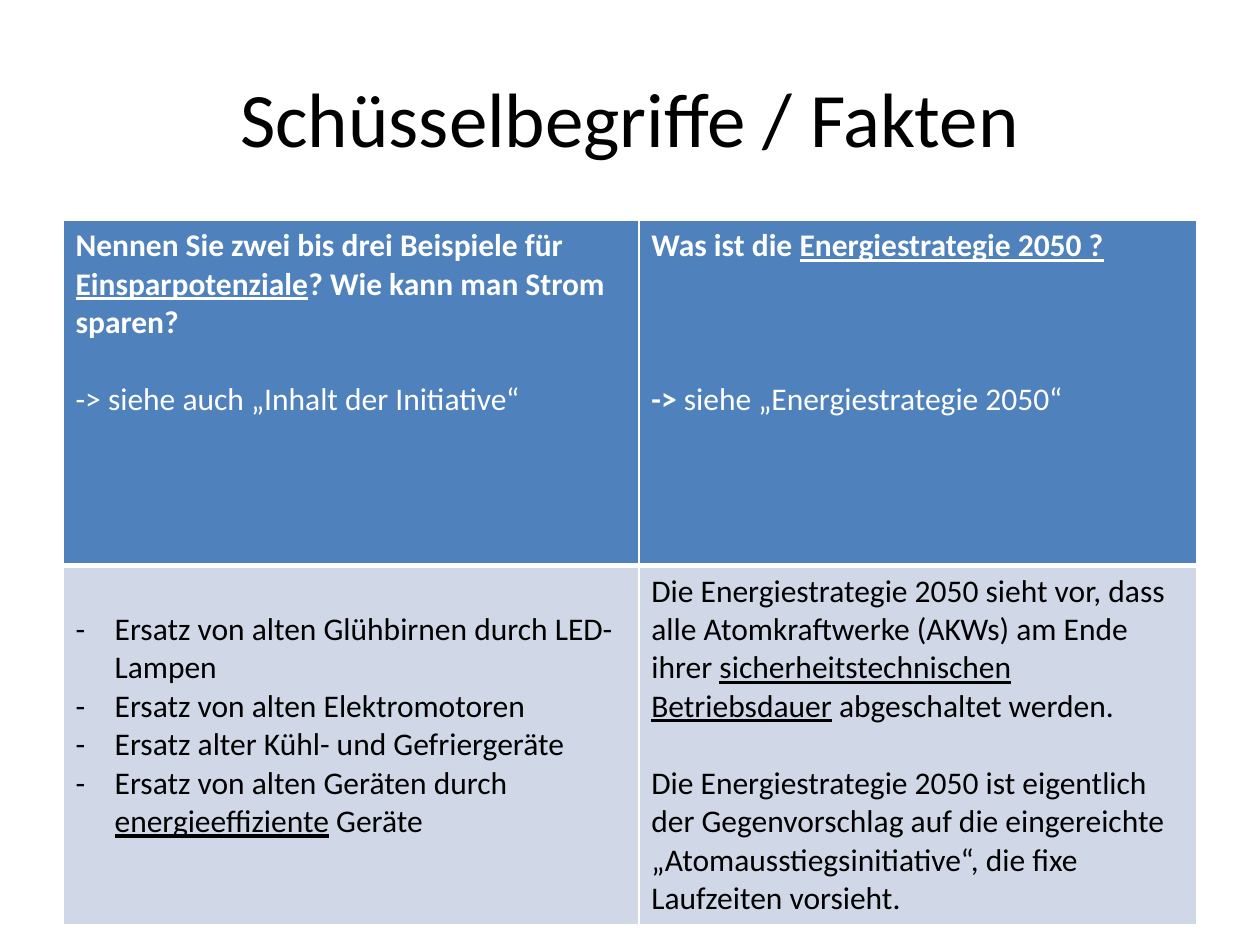
from dataclasses import dataclass

from lxml import etree
from pptx import Presentation
from pptx.dml.color import RGBColor
from pptx.enum.text import MSO_ANCHOR, PP_ALIGN
from pptx.oxml.ns import qn
from pptx.util import Inches, Length, Pt

CENTER = PP_ALIGN.CENTER
MIDDLE = MSO_ANCHOR.MIDDLE
TITLE_ONLY = 5


@dataclass(frozen=True)
class Theme:
    font: str = "Calibri"
    title_size: Length = Pt(44)
    text_size: Length = Pt(18)
    line_pitch: Length = Pt(22)
    thin_border: Length = Pt(1)
    thick_border: Length = Pt(3)
    black: str = "000000"
    white: str = "FFFFFF"
    header_fill: str = "4F81BD"
    body_fill: str = "D0D8E8"


@dataclass(frozen=True)
class Span:
    text: str
    bold: bool = False
    underline: bool = False


@dataclass(frozen=True)
class Para:
    spans: tuple[Span, ...]
    lines_before: int = 0
    bullet: str = ""


@dataclass(frozen=True)
class CellText:
    paras: tuple[Para, ...]
    lines_above: int = 0


@dataclass(frozen=True)
class RowStyle:
    fill: str
    color: str
    top: Length
    bottom: Length


THEME = Theme()
TITLE = "Schüsselbegriffe / Fakten"
COLUMN_WIDTHS = (4.57, 4.43)
ROW_HEIGHTS = (2.74, 2.8)
ROW_STYLES = (
    RowStyle(THEME.header_fill, THEME.white, THEME.thin_border, THEME.thick_border),
    RowStyle(THEME.body_fill, THEME.black, THEME.thick_border, THEME.thin_border),
)

SAVING_QUESTION = CellText((
    Para((
        Span("Nennen Sie zwei bis drei Beispiele für ", bold=True),
        Span("Einsparpotenziale", bold=True, underline=True),
        Span("? Wie kann man Strom sparen?", bold=True),
    )),
    Para((Span("-> siehe auch „Inhalt der Initiative“"),), lines_before=1),
))
STRATEGY_QUESTION = CellText((
    Para((
        Span("Was ist die ", bold=True),
        Span("Energiestrategie 2050 ?", bold=True, underline=True),
    )),
    Para(
        (Span("-> ", bold=True), Span("siehe „Energiestrategie 2050“")),
        lines_before=3,
    ),
))
SAVING_ANSWER = CellText((
    Para((Span("Ersatz von alten Glühbirnen durch LED-Lampen"),), bullet="-"),
    Para((Span("Ersatz von alten Elektromotoren"),), bullet="-"),
    Para((Span("Ersatz alter Kühl- und Gefriergeräte"),), bullet="-"),
    Para((
        Span("Ersatz von alten Geräten durch "),
        Span("energieeffiziente", underline=True),
        Span(" Geräte"),
    ), bullet="-"),
), lines_above=1)
STRATEGY_ANSWER = CellText((
    Para((
        Span("Die Energiestrategie 2050 sieht vor, dass alle Atomkraftwerke (AKWs) am Ende ihrer "),
        Span("sicherheitstechnischen Betriebsdauer", underline=True),
        Span(" abgeschaltet werden."),
    )),
    Para((
        Span("Die Energiestrategie 2050 ist eigentlich der Gegenvorschlag auf die eingereichte "
             "„Atomausstiegsinitiative“, die fixe Laufzeiten vorsieht."),
    ), lines_before=1),
))
ROWS = ((SAVING_QUESTION, STRATEGY_QUESTION), (SAVING_ANSWER, STRATEGY_ANSWER))


def set_attributes(target, values: dict) -> None:
    for name, value in values.items():
        setattr(target, name, value)


def add_span(paragraph, span: Span, size: Length, color: str) -> None:
    run = paragraph.add_run()
    run.text = span.text
    set_attributes(run.font, {
        "name": THEME.font,
        "size": size,
        "bold": span.bold,
        "underline": span.underline,
    })
    run.font.color.rgb = RGBColor.from_string(color)


def add_bullet(paragraph, character: str) -> None:
    properties = paragraph._p.get_or_add_pPr()
    indent = Inches(0.31)
    properties.set("marL", str(indent))
    properties.set("indent", str(-indent))
    etree.SubElement(properties, qn("a:buFont"), typeface=THEME.font)
    etree.SubElement(properties, qn("a:buChar"), char=character)


def set_borders(cell, style: RowStyle) -> None:
    widths = {
        "a:lnL": THEME.thin_border,
        "a:lnR": THEME.thin_border,
        "a:lnT": style.top,
        "a:lnB": style.bottom,
    }
    properties = cell._tc.get_or_add_tcPr()
    for position, (tag, width) in enumerate(widths.items()):
        line = etree.Element(qn(tag), w=str(width))
        fill = etree.SubElement(line, qn("a:solidFill"))
        etree.SubElement(fill, qn("a:srgbClr"), val=THEME.white)
        properties.insert(position, line)


def fill_cell(cell, content: CellText, style: RowStyle) -> None:
    cell.fill.solid()
    cell.fill.fore_color.rgb = RGBColor.from_string(style.fill)
    cell.margin_top = Inches(0.05) + content.lines_above * THEME.line_pitch
    set_borders(cell, style)
    frame = cell.text_frame
    for index, para in enumerate(content.paras):
        paragraph = frame.add_paragraph() if index else frame.paragraphs[0]
        if para.lines_before:
            paragraph.space_before = Length(para.lines_before * THEME.line_pitch)
        if para.bullet:
            add_bullet(paragraph, para.bullet)
        for span in para.spans:
            add_span(paragraph, span, THEME.text_size, style.color)


def add_title(page) -> None:
    box = page.shapes.title
    set_attributes(box, {
        "left": Inches(0.5),
        "top": Inches(0.3),
        "width": Inches(9),
        "height": Inches(1.25),
    })
    box.text_frame.vertical_anchor = MIDDLE
    paragraph = box.text_frame.paragraphs[0]
    paragraph.alignment = CENTER
    add_span(paragraph, Span(TITLE), THEME.title_size, THEME.black)


def add_facts_table(page) -> None:
    table = page.shapes.add_table(
        len(ROWS), len(COLUMN_WIDTHS), Inches(0.5), Inches(1.75),
        Inches(sum(COLUMN_WIDTHS)), Inches(sum(ROW_HEIGHTS)),
    ).table
    for column, width in zip(table.columns, COLUMN_WIDTHS):
        column.width = Inches(width)
    for row, height, contents, style in zip(table.rows, ROW_HEIGHTS, ROWS, ROW_STYLES):
        row.height = Inches(height)
        for cell, content in zip(row.cells, contents):
            fill_cell(cell, content, style)


def main() -> None:
    deck = Presentation()
    set_attributes(deck, {"slide_width": Inches(10), "slide_height": Inches(7.5)})
    page = deck.slides.add_slide(deck.slide_layouts[TITLE_ONLY])
    add_title(page)
    add_facts_table(page)
    deck.save("out.pptx")


if __name__ == "__main__":
    main()
